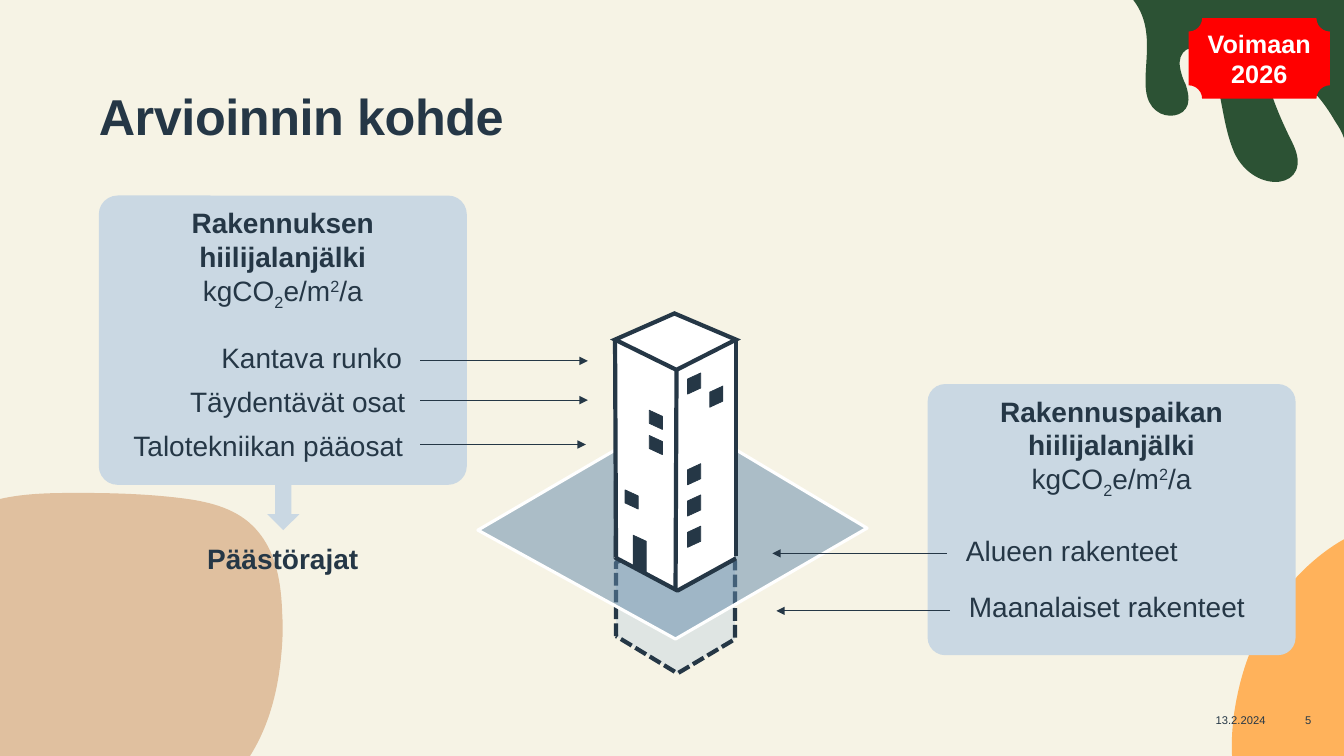
import lxml.etree
import pptx
import pptx.dml.color
import pptx.enum.dml
import pptx.enum.shapes
import pptx.enum.text
import pptx.oxml.ns
import pptx.util

Inches = pptx.util.Inches
RGB = pptx.dml.color.RGBColor.from_string
qn = pptx.oxml.ns.qn
ALIGN = pptx.enum.text.PP_ALIGN
ANCHOR = pptx.enum.text.MSO_ANCHOR
SHAPE = pptx.enum.shapes.MSO_SHAPE
COLORS = {
    "cream": "F6F3E5", "navy": "253746", "pale": "CAD8E3", "steel": "6189AB",
    "white": "FFFFFF", "red": "FF0000", "orange": "FFB25B", "sand": "E0C09F", "green": "2C5234",
}

deck = pptx.Presentation()
deck.slide_width, deck.slide_height = Inches(13.33), Inches(7.5)
slide = deck.slides.add_slide(deck.slide_layouts[5])
slide.background.fill.solid()
slide.background.fill.fore_color.rgb = RGB(COLORS["cream"])
shapes = slide.shapes


def write(frame, paragraphs, size=20, color="navy", align=ALIGN.LEFT,
          anchor=ANCHOR.TOP, inset=(0, 0), wrap=True):
    """Fill a text frame; each paragraph is a list of (text, bold, baseline percent)."""
    frame.word_wrap = wrap
    frame.auto_size = pptx.enum.text.MSO_AUTO_SIZE.NONE
    frame.vertical_anchor = anchor
    frame.margin_left = frame.margin_right = Inches(inset[0])
    frame.margin_top = frame.margin_bottom = Inches(inset[1])
    for number, runs in enumerate(paragraphs):
        paragraph = frame.add_paragraph() if number else frame.paragraphs[0]
        paragraph.alignment = align
        for text, bold, baseline in runs:
            run = paragraph.add_run()
            run.text = text
            run.font.name, run.font.size, run.font.bold = "Arial", pptx.util.Pt(size), bold
            run.font.color.rgb = RGB(COLORS[color])
            if baseline:
                run.font._element.set("baseline", str(baseline * 1000))


def outline(points, fill, line=None, width=0.5, close=True, alpha=None):
    """Draw a filled freeform through points given in inches."""
    corners = [(Inches(x), Inches(y)) for x, y in points]
    builder = shapes.build_freeform(*corners[0], scale=1.0)
    builder.add_line_segments(corners[1:], close=close)
    form = builder.convert_to_shape()
    form.shadow.inherit = False
    form.fill.solid()
    form.fill.fore_color.rgb = RGB(COLORS[fill])
    if alpha:
        tint = form._element.spPr.find(qn("a:solidFill"))[0]
        lxml.etree.SubElement(tint, qn("a:alpha")).set("val", str(alpha * 1000))
    if line:
        form.line.color.rgb = RGB(COLORS[line])
        form.line.width = pptx.util.Pt(width)
    else:
        form.line.fill.background()
    return form


# Background blobs: a chain of cubic curves, then one straight corner
blobs = [
    ("orange", (13.33, 5.35), [
        (13.15, 5.45, 12.97, 5.6, 12.82, 5.77), (12.53, 6.1, 12.35, 6.51, 12.27, 6.91),
        (12.23, 7.1, 12.21, 7.31, 12.22, 7.5)], (13.33, 7.5)),
    ("sand", (2.48, 7.5), [
        (2.65, 7.23, 2.74, 6.92, 2.78, 6.59), (2.8, 6.42, 2.81, 6.26, 2.8, 6.1),
        (2.79, 5.8, 2.75, 5.46, 2.51, 5.22), (2.32, 5.03, 2.04, 4.97, 1.78, 4.94),
        (1.45, 4.9, 1.12, 4.89, 0.79, 4.89), (0.54, 4.89, 0.26, 4.89, 0, 4.95)], (0, 7.5)),
    ("green", (13.33, 1.37), [
        (13.31, 1.31, 13.28, 1.26, 13.24, 1.2), (13.13, 1.01, 12.99, 0.83, 12.79, 0.74),
        (12.71, 0.7, 12.67, 0.65, 12.6, 0.71), (12.51, 0.79, 12.76, 1.3, 12.82, 1.42),
        (13.05, 1.88, 12.44, 1.95, 12.24, 1.51), (12.09, 1.15, 12.14, 0.81, 11.93, 0.55),
        (11.9, 0.52, 11.86, 0.48, 11.81, 0.48), (11.75, 0.48, 11.7, 0.55, 11.7, 0.62),
        (11.7, 0.69, 11.73, 0.78, 11.76, 0.84), (11.78, 0.9, 11.8, 0.97, 11.78, 1.04),
        (11.74, 1.16, 11.57, 1.18, 11.47, 1.1), (11.21, 0.9, 11.54, 0.38, 11.24, 0)],
        (13.33, 0)),
]
for color, start, curves, corner in blobs:
    points = [(curve[i], curve[i + 1]) for curve in curves for i in (0, 2, 4)]
    blob = outline([start] + points + [corner], color)
    # Turn each run of three straight segments into one cubic curve
    segments = list(blob._element.iter(qn("a:lnTo")))
    for first in range(0, 3 * len(curves), 3):
        bend, second, third = segments[first:first + 3]
        cubic = lxml.etree.Element(qn("a:cubicBezTo"))
        bend.addprevious(cubic)
        for segment in (bend, second, third):
            cubic.append(segment[0])
            segment.getparent().remove(segment)

title = shapes.title
title.left, title.top, title.width, title.height = map(Inches, (0.98, 0.91, 11.38, 1.31))
write(title.text_frame, [[("Arvioinnin kohde", True, 0)]], size=36)
heading = title.text_frame.paragraphs[0]
heading.line_spacing = 0.9
heading.runs[0].font._element.set("spc", "-30")

# Cards, arrow and badge
unit = [("kgCO", False, 0), ("2", False, -25), ("e/m", False, 0), ("2", False, 30), ("/a", False, 0)]
panels = [
    (SHAPE.ROUNDED_RECTANGLE, (9.2, 3.81, 3.65, 2.69), "pale",
     [[("Rakennuspaikan hiilijalanjälki", True, 0)], unit], {"inset": (0.1, 0.05)}),
    (SHAPE.ROUNDED_RECTANGLE, (0.98, 1.94, 3.65, 2.87), "pale",
     [[("Rakennuksen hiilijalanjälki", True, 0)], unit], {"inset": (0.1, 0.05)}),
    (SHAPE.DOWN_ARROW, (2.65, 4.81, 0.32, 0.45), "pale", [], {}),
    (SHAPE.PLAQUE, (11.79, 0.18, 1.4, 0.8), "red", [[("Voimaan 2026", True, 0)]],
     {"size": 18, "color": "white", "anchor": ANCHOR.MIDDLE, "inset": (0.05, 0.05)}),
]
for kind, box, fill, paragraphs, style in panels:
    panel = shapes.add_shape(kind, *map(Inches, box))
    panel.shadow.inherit = False
    panel.fill.solid()
    panel.fill.fore_color.rgb = RGB(COLORS[fill])
    panel.line.fill.background()
    if kind == SHAPE.ROUNDED_RECTANGLE:
        panel.adjustments[0] = 0.065
    write(panel.text_frame, paragraphs, align=ALIGN.CENTER, **style)

# Basement, plot and building
basement = outline([(6.11, 6.31), (6.11, 5.58), (6.72, 5.29), (7.29, 5.57), (7.29, 6.34), (6.72, 6.68)],
                   "pale", "navy", 3, alpha=50)
basement.line.dash_style = pptx.enum.dml.MSO_LINE.SQUARE_DOT
outline([(4.74, 5.26), (6.71, 4.11), (8.6, 5.24), (6.7, 6.34)], "steel", "white", 2.25, alpha=50)
outline([(6.1, 3.37), (6.68, 3.11), (7.29, 3.38), (7.29, 5.53), (6.71, 5.85), (6.09, 5.54)],
        "white", "navy")
outline([(6.1, 5.53), (6.72, 5.86), (7.3, 5.54)], "white", "navy", 3, close=False)
roof = outline([(6.1, 3.37), (6.69, 3.11), (7.3, 3.37), (6.71, 3.67)], "white", "navy", 3)
lxml.etree.SubElement(roof.line._get_or_add_ln(), qn("a:miter")).set("lim", "800000")

# Openings: left, top, height of the side edge, drop of the left and right corners
right_wall = [(6.82, 3.7), (7.04, 3.83), (6.82, 4.6), (6.82, 4.91), (6.82, 5.22)]
left_wall = [(6.44, 4.07), (6.44, 4.32), (6.2, 4.86)]
openings = [(x, y, 0.15, 0.06, 0) for x, y in right_wall]
openings += [(x, y, 0.13, 0, 0.06) for x, y in left_wall]
openings.append((6.28, 5.31, 0.31, 0, 0.06))
for x, y, height, left_drop, right_drop in openings:
    outline([(x, y + left_drop), (x + 0.13, y + right_drop),
             (x + 0.13, y + right_drop + height), (x, y + left_drop + height)], "navy", "navy")

# Building edges (3 pt) and label arrows (0.5 pt)
edges = [(6.7, 5.84, 6.71, 3.67), (7.3, 5.52, 7.3, 3.37), (6.11, 5.53, 6.1, 3.37)]
arrows = [(4.17, 3.58, 5.83, 3.58), (4.17, 3.97, 5.83, 3.97), (4.17, 4.41, 5.81, 4.41),
          (9.39, 5.49, 7.66, 5.49), (9.42, 6.06, 7.7, 6.06)]
for ends in edges + arrows:
    connector = shapes.add_connector(pptx.enum.shapes.MSO_CONNECTOR.STRAIGHT, *map(Inches, ends))
    connector.line.color.rgb = RGB(COLORS["navy"])
    connector.line.width = pptx.util.Pt(3 if ends in edges else 0.5)
    if ends in arrows:
        stroke = connector.line._get_or_add_ln()
        lxml.etree.SubElement(stroke, qn("a:tailEnd")).set("type", "triangle")
    lxml.etree.SubElement(connector._element.spPr, qn("a:effectLst"))

footer = {"size": 8, "align": ALIGN.CENTER, "anchor": ANCHOR.MIDDLE}
labels = [
    ("Kantava runko", (1.13, 3.38, 2.86, 0.34), False, {"align": ALIGN.RIGHT}),
    ("Täydentävät osat", (1.23, 3.81, 2.79, 0.34), False, {"align": ALIGN.RIGHT}),
    ("Talotekniikan pääosat", (1.21, 4.25, 2.79, 0.34), False, {"align": ALIGN.RIGHT}),
    ("Alueen rakenteet", (9.58, 5.29, 2.12, 0.34), False, {"wrap": False}),
    ("Maanalaiset rakenteet", (9.61, 5.85, 2.83, 0.34), False, {"wrap": False}),
    ("Päästörajat", (1.95, 5.32, 1.71, 0.44), True,
     {"align": ALIGN.CENTER, "inset": (0.1, 0.05), "wrap": False}),
    ("13.2.2024", (11.9, 7.03, 0.81, 0.22), False, footer),
    ("5", (12.74, 7.03, 0.47, 0.22), False, footer),
]
for text, box, bold, style in labels:
    label = shapes.add_textbox(*map(Inches, box))
    write(label.text_frame, [[(text, bold, 0)]], **style)

deck.save("out.pptx")
